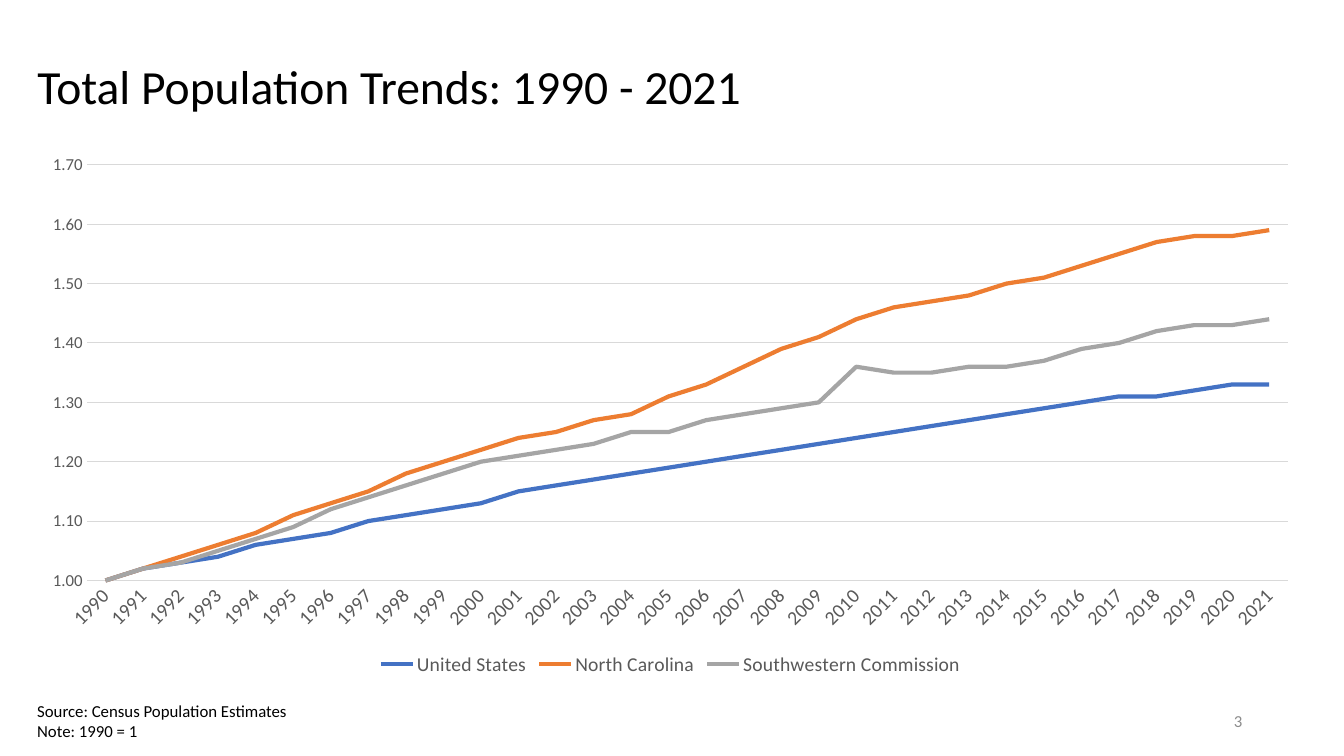
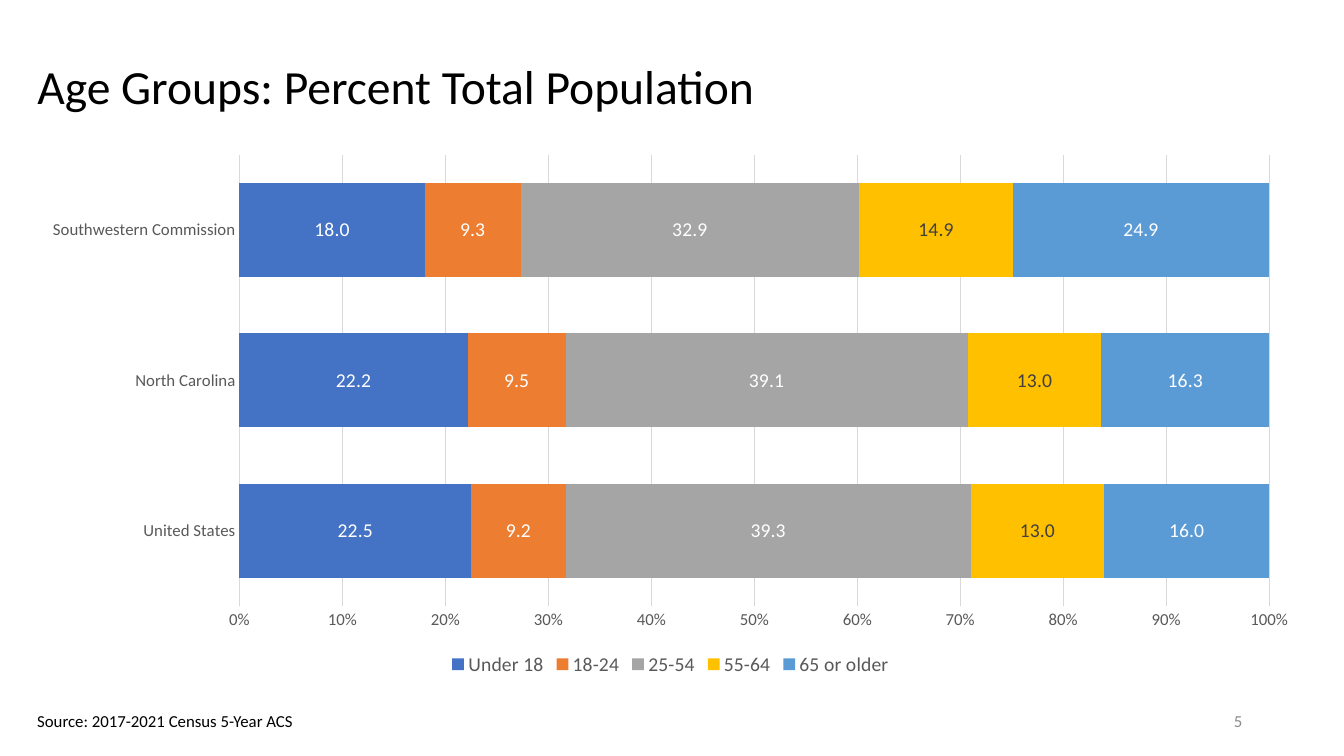
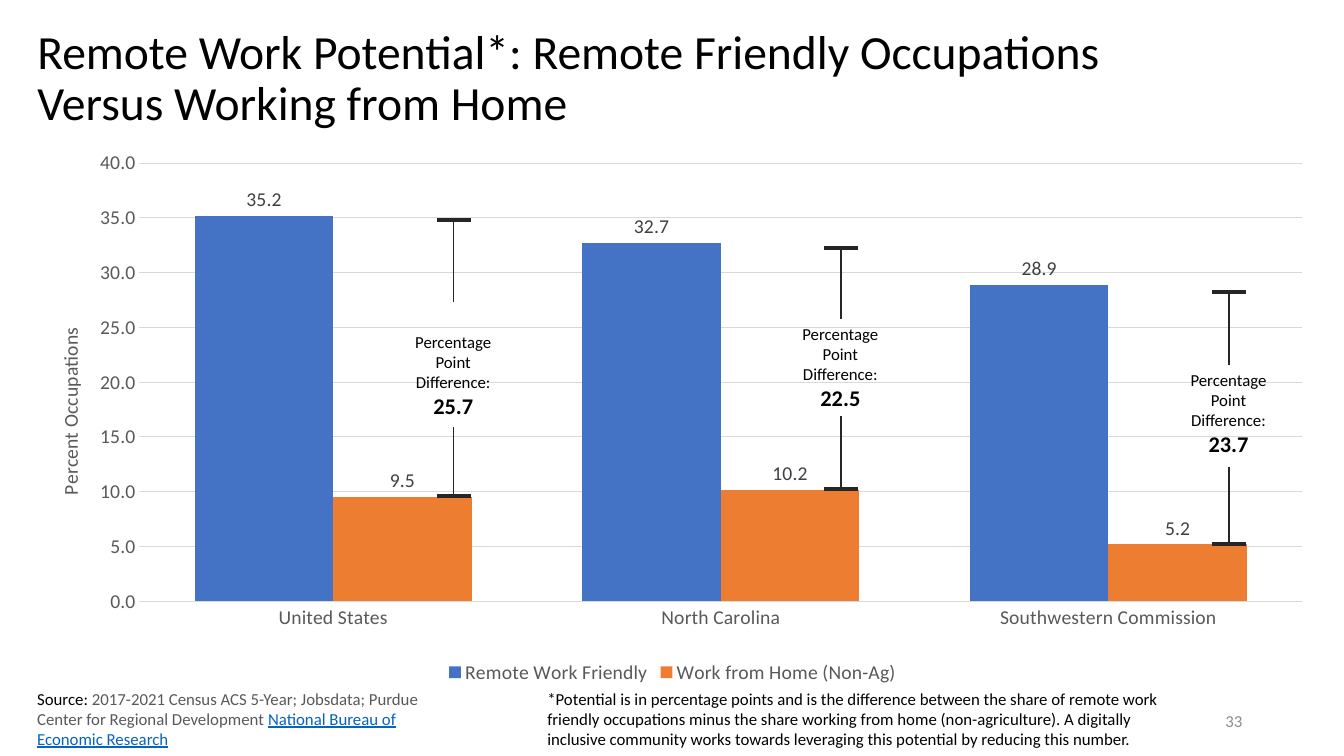
from lxml.etree import SubElement
from pptx import Presentation
from pptx.chart.data import CategoryChartData
from pptx.dml.color import RGBColor
from pptx.enum.chart import (XL_CHART_TYPE as Kind, XL_LABEL_POSITION as Spot,
                             XL_LEGEND_POSITION as Side, XL_TICK_MARK as Tick)
from pptx.enum.shapes import MSO_CONNECTOR as Link
from pptx.enum.text import MSO_ANCHOR as Anchor, PP_ALIGN as Align
from pptx.oxml.ns import qn
from pptx.util import Inches, Pt

# Shared look
FACE = "Calibri"
HUE = {"black": "000000", "text": "595959", "dark": "404040", "mark": "262626",
       "grid": "D9D9D9", "page": "8C8C8C", "link": "0563C1", "white": "FFFFFF",
       "blue": "4472C4", "orange": "ED7D31", "gray": "A5A5A5",
       "gold": "FFC000", "sky": "5B9BD5"}
ORDER = ["blue", "orange", "gray", "gold", "sky"]
LEFT, WIDE, TOP = 0.27, 12.76, 1.43

# Content
AREAS = ["United States", "North Carolina", "Southwestern Commission"]
TREND = {
    AREAS[0]: [1, 1.02, 1.03, 1.04, 1.06, 1.07, 1.08, 1.1, 1.11, 1.12, 1.13,
               1.15, 1.16, 1.17, 1.18, 1.19, 1.2, 1.21, 1.22, 1.23, 1.24, 1.25,
               1.26, 1.27, 1.28, 1.29, 1.3, 1.31, 1.31, 1.32, 1.33, 1.33],
    AREAS[1]: [1, 1.02, 1.04, 1.06, 1.08, 1.11, 1.13, 1.15, 1.18, 1.2, 1.22,
               1.24, 1.25, 1.27, 1.28, 1.31, 1.33, 1.36, 1.39, 1.41, 1.44, 1.46,
               1.47, 1.48, 1.5, 1.51, 1.53, 1.55, 1.57, 1.58, 1.58, 1.59],
    AREAS[2]: [1, 1.02, 1.03, 1.05, 1.07, 1.09, 1.12, 1.14, 1.16, 1.18, 1.2,
               1.21, 1.22, 1.23, 1.25, 1.25, 1.27, 1.28, 1.29, 1.3, 1.36, 1.35,
               1.35, 1.36, 1.36, 1.37, 1.39, 1.4, 1.42, 1.43, 1.43, 1.44],
}
AGES = {"Under 18": [22.5, 22.2, 18], "18-24": [9.2, 9.5, 9.3],
        "25-54": [39.3, 39.1, 32.9], "55-64": [13, 13, 14.9],
        "65 or older": [16, 16.3, 24.9]}
REMOTE = {"Remote Work Friendly": [35.2, 32.7, 28.9],
          "Work from Home (Non-Ag)": [9.5, 10.2, 5.2]}
# Difference, centre, upper cap, upper stem end, text top, lower stem start, lower cap
GAPS = [("25.7", 4.5, 2.18, 3, 3.24, 4.24, 4.92),
        ("22.5", 8.34, 2.46, 3.16, 3.16, 4.13, 4.85),
        ("23.7", 12.19, 2.9, 3.62, 3.62, 4.63, 5.4)]
CREDIT = [("Source: ", "black"),
          ("2017-2021 Census ACS 5-Year; Jobsdata; Purdue Center for Regional "
           "Development ", "text"),
          ("National Bureau of Economic Research", "link")]
NOTE = ("*Potential is in percentage points and is the difference between the "
        "share of remote work friendly occupations minus the share working from "
        "home (non-agriculture). A digitally inclusive community works towards "
        "leveraging this potential by reducing this number.")


def rgb(name):
    return RGBColor.from_string(HUE[name])


def style(font, size, hue="text", bold=False):
    font.name, font.size, font.bold = FACE, Pt(size), bold
    font.color.rgb = rgb(hue)


def add_text(slide, box, paras, wrap=True, align=Align.LEFT, hue="black"):
    frame = slide.shapes.add_textbox(*map(Inches, box)).text_frame
    frame.word_wrap = wrap
    frame.text = "\n".join(paras)
    for para in frame.paragraphs:
        para.alignment = align
        for run in para.runs:
            style(run.font, 12, hue)
    return frame


def add_line(slide, x1, y1, x2, y2, width):
    line = slide.shapes.add_connector(Link.STRAIGHT, *map(Inches, (x1, y1, x2, y2)))
    line.line.color.rgb = rgb("mark")
    line.line.width = Pt(width)
    SubElement(line._element.spPr, qn("a:effectLst"))


def add_page(deck, title, top, page):
    """Slide with its title and page number."""
    slide = deck.slides.add_slide(deck.slide_layouts[5])
    head = slide.shapes.title
    head.left, head.top, head.width, head.height = map(
        Inches, (LEFT, top, WIDE, TOP - top))
    frame = head.text_frame
    frame.word_wrap, frame.vertical_anchor = True, Anchor.MIDDLE
    para = frame.paragraphs[0]
    para.text = title
    para.alignment, para.line_spacing = Align.LEFT, 0.9
    for run in para.runs:
        style(run.font, 34, "black")
    frame = add_text(slide, (9.42, 6.95, 3, 0.4), [page], align=Align.RIGHT, hue="page")
    frame.vertical_anchor = Anchor.MIDDLE
    return slide


def place(node, **spots):
    """Set a fixed layout on a chart part."""
    lay = node.find(qn("c:layout"))
    if lay is None:
        lay = SubElement(node, qn("c:layout"))
        node.insert(0, lay)
    man = SubElement(lay, qn("c:manualLayout"))
    for key, val in spots.items():
        SubElement(man, qn("c:" + key)).set("val", str(val))


def add_plot(slide, kind, cats, rows, size, fmt, sizes, tall=5.32, wide=WIDE):
    """Chart with shared axes, legend and series colours."""
    data = CategoryChartData(number_format=fmt)
    data.categories = cats
    for name, vals in rows.items():
        data.add_series(name, vals)
    chart = slide.shapes.add_chart(
        kind, *map(Inches, (LEFT, TOP, wide, tall)), data).chart
    style(chart.font, size, "black")
    chart.has_title = False
    chart.has_legend = True
    chart.legend.position, chart.legend.include_in_layout = Side.BOTTOM, False
    style(chart.legend.font, 14)
    cat, val = chart.category_axis, chart.value_axis
    for axis, points in zip((cat, val), sizes):
        axis.major_tick_mark = axis.minor_tick_mark = Tick.NONE
        style(axis.tick_labels.font, points)
    val.format.line.fill.background()
    val.has_major_gridlines = True
    for line in (cat.format.line, val.major_gridlines.format.line):
        line.color.rgb, line.width = rgb("grid"), Pt(0.75)
    val.tick_labels.number_format = fmt
    val.tick_labels.number_format_is_linked = False
    plot = chart.plots[0]
    plot.vary_by_categories = False
    for row, hue in zip(plot.series, ORDER):
        if kind == Kind.LINE:
            row.smooth = False
            row.format.line.color.rgb, row.format.line.width = rgb(hue), Pt(3)
        else:
            row.format.fill.solid()
            row.format.fill.fore_color.rgb = rgb(hue)
    return chart


def add_labels(row, fmt, hue, spot):
    tags = row.data_labels
    tags.show_value, tags.position = True, spot
    tags.number_format, tags.number_format_is_linked = fmt, False
    style(tags.font, 14, hue)


def scale(axis, low, high, step):
    axis.minimum_scale, axis.maximum_scale, axis.major_unit = low, high, step


def add_trend(deck):
    slide = add_page(deck, "Total Population Trends: 1990 - 2021", 0.34, "3")
    years = [str(year) for year in range(1990, 2022)]
    chart = add_plot(slide, Kind.LINE, years, TREND, 10, "0.00", (14, 12))
    scale(chart.value_axis, 1, 1.7, 0.1)
    body = chart.category_axis._element.find(qn("c:txPr")).find(qn("a:bodyPr"))
    body.set("rot", "-2700000")
    add_text(slide, (LEFT, 6.9, 2.71, 0.5),
             ["Source: Census Population Estimates", "Note: 1990 = 1"], wrap=False)


def add_ages(deck):
    slide = add_page(deck, "Age Groups: Percent Total Population", 0.34, "5")
    chart = add_plot(slide, Kind.BAR_STACKED_100, AREAS, AGES, 10, "0%", (12, 12))
    scale(chart.value_axis, 0, 1, 0.1)
    plot = chart.plots[0]
    plot.gap_width, plot.overlap = 60, 100
    for row, hue in zip(plot.series, ORDER):
        add_labels(row, "#,##0.0", "dark" if hue == "gold" else "white", Spot.CENTER)
    add_text(slide, (LEFT, 7, 2.78, 0.3),
             ["Source: 2017-2021 Census 5-Year ACS"], wrap=False)


def add_remote(deck):
    slide = add_page(deck, "Remote Work Potential*: Remote Friendly Occupations\v"
                     "Versus Working from Home", 0.15, "33")
    chart = add_plot(slide, Kind.COLUMN_CLUSTERED, AREAS, REMOTE, 14, "0.0",
                     (14, 14), 5.4, 12.8)
    val, plot = chart.value_axis, chart.plots[0]
    scale(val, 0, 40, 5)
    plot.gap_width, plot.overlap = 80, 0
    for row in plot.series:
        add_labels(row, "0.0", "dark", Spot.OUTSIDE_END)
    place(chart._chartSpace.chart.plotArea, layoutTarget="inner", xMode="edge",
          yMode="edge", x=0.087, y=0.035, w=0.901, h=0.805)

    # Axis title, turned to read upwards
    frame = val.axis_title.text_frame
    frame.text = "Percent Occupations"
    style(frame.paragraphs[0].runs[0].font, 14)
    body = frame._txBody.find(qn("a:bodyPr"))
    body.set("rot", "-5400000")
    body.set("vert", "horz")
    place(val.axis_title._element, xMode="edge", yMode="edge", x=0.02, y=0.33)

    # Brackets with the difference between each pair of bars
    for diff, mid, high, end, top, start, low in GAPS:
        frame = add_text(slide, (mid - 0.66, top, 1.31, 0.98),
                         ["Percentage\vPoint", "Difference:\v"], align=Align.CENTER)
        run = frame.paragraphs[1].add_run()
        run.text = diff
        style(run.font, 16, "black", True)
        for y in (low, high):
            add_line(slide, mid - 0.17, y, mid + 0.17, y, 3)
        for y1, y2 in ((high, end), (start, low)):
            add_line(slide, mid, y1, mid, y2, 1)

    # Footnotes
    para = add_text(slide, (LEFT, 6.78, 4.4, 0.71), [""]).paragraphs[0]
    for words, hue in CREDIT:
        run = para.add_run()
        run.text = words
        style(run.font, 12, hue)
        run.font.underline = hue == "link"
    add_text(slide, (5.33, 6.78, 6.54, 0.71), [NOTE])


def main():
    deck = Presentation()
    deck.slide_width, deck.slide_height = Inches(13.33), Inches(7.5)
    for build in (add_trend, add_ages, add_remote):
        build(deck)
    deck.save("out.pptx")


if __name__ == "__main__":
    main()
